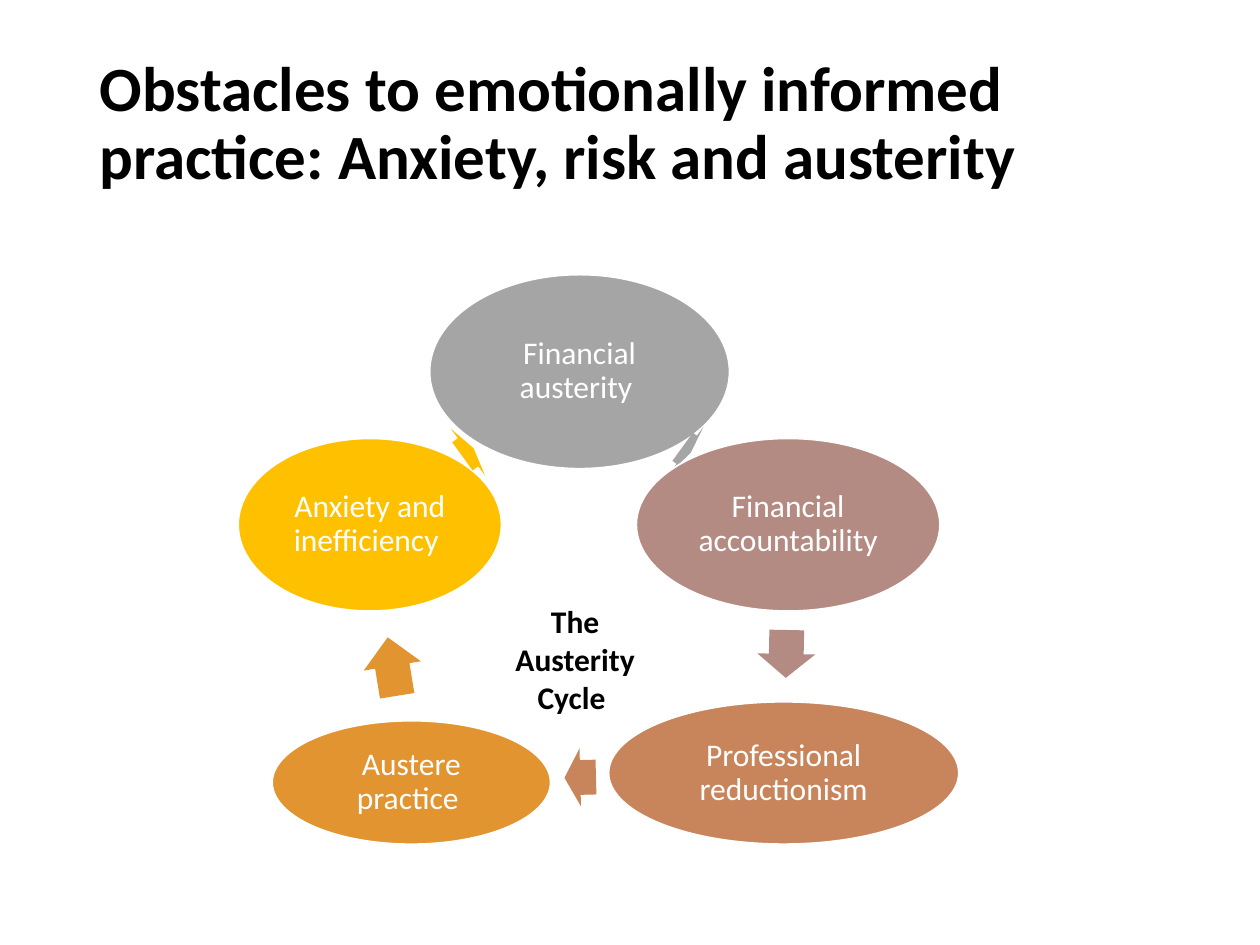
import dataclasses

import pptx
import pptx.dml.color
import pptx.enum.shapes
import pptx.enum.text
import pptx.util

Inches = pptx.util.Inches
Shapes = pptx.enum.shapes.MSO_SHAPE
Align = pptx.enum.text.PP_ALIGN
Anchor = pptx.enum.text.MSO_ANCHOR


@dataclasses.dataclass(frozen=True)
class Theme:
    font: str = "Calibri"
    ink: str = "000000"
    paper: str = "FFFFFF"
    grey: str = "A5A5A5"
    rose: str = "B48B83"
    copper: str = "C8855C"
    orange: str = "E19430"
    gold: str = "FFC000"
    title_size: int = 36
    body_size: int = 18


@dataclasses.dataclass(frozen=True)
class Box:
    left: float
    top: float
    width: float
    height: float

    def inside(self, left, top, width, height):
        return Box(self.left + left, self.top + top, width, height)

    def lengths(self):
        return [Inches(value) for value in dataclasses.astuple(self)]


THEME = Theme()
ARROW_HEIGHT = 0.46

STAGES = [
    ("Financial austerity ", THEME.grey, (1.52, 0, 2.38, 1.54), (3.52, 1.16, 0.08), 36),
    ("Financial accountability", THEME.rose, (3.16, 1.3, 2.41, 1.37), (4.16, 2.78, 0.38), 91.2),
    ("Professional reductionism", THEME.copper, (2.94, 3.39, 2.78, 1.13), (2.59, 3.76, 0.25), 178.5),
    ("Austere practice ", THEME.orange, (0.27, 3.54, 2.21, 0.98), (0.99, 2.88, 0.47), 260.8),
    ("Anxiety and inefficiency ", THEME.gold, (0, 1.3, 2.09, 1.37), (1.77, 1.18, 0.11), 324),
]


def colour(value):
    return pptx.dml.color.RGBColor.from_string(value)


def write(frame, text, *, size, ink, bold=False, align=Align.CENTER,
          anchor=Anchor.TOP, spacing=None, inset=None):
    frame.word_wrap = True
    frame.auto_size = pptx.enum.text.MSO_AUTO_SIZE.NONE
    frame.vertical_anchor = anchor
    if inset is not None:
        frame.margin_left = frame.margin_right = Inches(inset)
        frame.margin_top = frame.margin_bottom = Inches(inset)
    para = frame.paragraphs[0]
    para.alignment = align
    para.line_spacing = spacing
    span = para.add_run()
    span.text = text
    span.font.name = THEME.font
    span.font.size = pptx.util.Pt(size)
    span.font.bold = bold
    span.font.color.rgb = colour(ink)


def add_filled(shapes, kind, box, fill):
    shape = shapes.add_shape(kind, *box.lengths())
    shape.shadow.inherit = False
    shape.fill.solid()
    shape.fill.fore_color.rgb = colour(fill)
    shape.line.fill.background()
    return shape


def place_title(page, box):
    title = page.shapes.title
    title.left, title.top, title.width, title.height = box.lengths()
    write(title.text_frame,
          "Obstacles to emotionally informed practice: Anxiety, risk and austerity",
          size=THEME.title_size, ink=THEME.ink, bold=True, align=Align.LEFT, spacing=0.9)


def place_cycle(page, box):
    cycle = page.shapes.add_group_shape()
    for text, fill, oval_place, arrow_place, angle in STAGES:
        oval = add_filled(cycle.shapes, Shapes.OVAL, box.inside(*oval_place), fill)
        oval.line.color.rgb = colour(THEME.paper)
        oval.line.width = pptx.util.Pt(1)
        write(oval.text_frame, text, size=THEME.body_size, ink=THEME.paper,
              anchor=Anchor.MIDDLE, spacing=0.9, inset=0.03)
        arrow = add_filled(cycle.shapes, Shapes.RIGHT_ARROW,
                           box.inside(*arrow_place, ARROW_HEIGHT), fill)
        arrow.adjustments[0] = 0.6
        arrow.adjustments[1] = 0.5
        arrow.rotation = angle


def place_caption(page, box):
    caption = page.shapes.add_textbox(*box.lengths())
    write(caption.text_frame, "The Austerity Cycle ",
          size=THEME.body_size, ink=THEME.ink, bold=True)


def main():
    deck = pptx.Presentation()
    deck.slide_width, deck.slide_height = Inches(10), Inches(7.5)
    page = deck.slides.add_slide(deck.slide_layouts.get_by_name("Title Only"))
    cycle_box = Box(1.89, 2.18, 5.72, 4.52)
    place_title(page, Box(0.69, 0.4, 8.62, 1.45))
    place_cycle(page, cycle_box)
    place_caption(page, cycle_box.inside(2.01, 2.55, 1.33, 1.01))
    deck.save("out.pptx")


if __name__ == "__main__":
    main()
